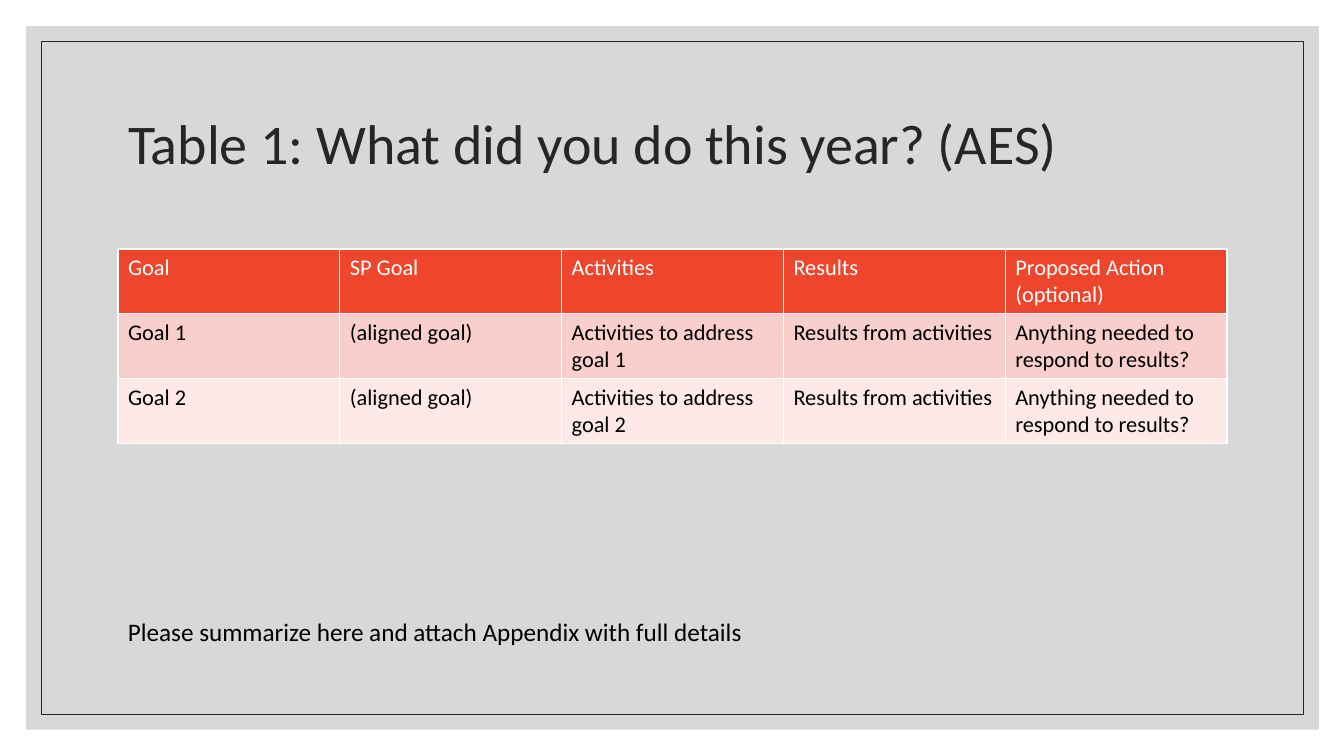
from dataclasses import dataclass

from lxml.etree import SubElement
from pptx import Presentation
from pptx.dml.color import RGBColor
from pptx.enum.shapes import MSO_SHAPE
from pptx.enum.text import MSO_ANCHOR, MSO_AUTO_SIZE, PP_ALIGN
from pptx.oxml import parse_xml
from pptx.oxml.ns import nsdecls, qn
from pptx.util import Inches, Pt


@dataclass(frozen=True)
class Theme:
    """Colours, font and type sizes of the slide."""
    font: str = "Calibri"
    dark: str = "262626"
    black: str = "000000"
    white: str = "FFFFFF"
    panel: str = "BFBFBF"
    head: str = "EE462D"
    bands: tuple = ("F8CFCD", "FCE9E8")
    title: int = 40
    note: int = 18
    cell: int = 16


def rgb(code):
    """Return the colour for a hex code."""
    return RGBColor.from_string(code)


def write(frame, text, *, font, size, color, anchor=MSO_ANCHOR.TOP, spacing=None):
    """Put formatted text into a text frame."""
    frame.word_wrap = True
    frame.vertical_anchor = anchor
    para = frame.paragraphs[0]
    para.alignment = PP_ALIGN.LEFT
    if spacing:
        para.line_spacing = spacing
    run = para.add_run()
    run.text = text
    run.font.name = font
    run.font.size = Pt(size)
    run.font.color.rgb = rgb(color)


class Board:
    """Holds the theme and the current slide."""

    def __init__(self, theme, slide):
        """Keep the theme and the slide."""
        self.theme = theme
        self.slide = slide

    def rect(self, left, top, width, height, fill=None, alpha=100, line=None):
        """Add a plain rectangle."""
        box = self.slide.shapes.add_shape(
            MSO_SHAPE.RECTANGLE, Inches(left), Inches(top), Inches(width), Inches(height))
        box.shadow.inherit = False
        if fill:
            box.fill.solid()
            box.fill.fore_color.rgb = rgb(fill)
            color = box.element.spPr.find(qn("a:solidFill"))[0]
            SubElement(color, qn("a:alpha")).set("val", str(alpha * 1000))
        else:
            box.fill.background()
        if line:
            box.line.color.rgb = rgb(line)
            box.line.width = Pt(0.5)
        else:
            box.line.fill.background()

    def title(self, text, left, top, width, height):
        """Fill the title placeholder and bring it to the front."""
        shape = self.slide.shapes.title
        shape.left, shape.top = Inches(left), Inches(top)
        shape.width, shape.height = Inches(width), Inches(height)
        write(shape.text_frame, text, font=self.theme.font, size=self.theme.title,
              color=self.theme.dark, anchor=MSO_ANCHOR.MIDDLE, spacing=0.9)
        shape.element.getparent().append(shape.element)

    def note(self, text, left, top, width, height):
        """Add a text box."""
        box = self.slide.shapes.add_textbox(
            Inches(left), Inches(top), Inches(width), Inches(height))
        write(box.text_frame, text, font=self.theme.font, size=self.theme.note,
              color=self.theme.black)
        box.text_frame.auto_size = MSO_AUTO_SIZE.SHAPE_TO_FIT_TEXT

    def edge(self, cell):
        """Draw thin white borders round a cell."""
        props = cell._tc.get_or_add_tcPr()
        for side in ("lnL", "lnR", "lnT", "lnB"):
            props.append(parse_xml(
                f'<a:{side} {nsdecls("a")} w="{Pt(1)}"><a:solidFill>'
                f'<a:srgbClr val="{self.theme.white}"/></a:solidFill></a:{side}>'))

    def table(self, rows, left, top, width, height):
        """Add a table with a header row and banded rows."""
        table = self.slide.shapes.add_table(
            len(rows), len(rows[0]), Inches(left), Inches(top),
            Inches(width), Inches(height)).table
        for i, row in enumerate(rows):
            fill = self.theme.bands[(i - 1) % 2] if i else self.theme.head
            for j, text in enumerate(row):
                cell = table.cell(i, j)
                self.edge(cell)
                cell.fill.solid()
                cell.fill.fore_color.rgb = rgb(fill)
                write(cell.text_frame, text, font=self.theme.font, size=self.theme.cell,
                      color=self.theme.black if i else self.theme.white)


def main():
    """Build the slide and save it."""
    deck = Presentation()
    deck.slide_width, deck.slide_height = Inches(13.33), Inches(7.5)
    theme = Theme()
    board = Board(theme, deck.slides.add_slide(deck.slide_layouts[5]))
    board.rect(0.26, 0.26, 12.82, 6.98, fill=theme.panel, alpha=60)
    board.rect(0.41, 0.41, 12.52, 6.68, line=theme.dark)
    board.title("Table 1: What did you do this year? (AES)", 1.17, 0.7, 11, 1.5)
    head = ["Goal", "SP Goal", "Activities", "Results", "Proposed Action (optional)"]
    goals = [[f"Goal {n}", "(aligned goal)", f"Activities to address goal {n}",
              "Results from activities", "Anything needed to respond to results?"]
             for n in (1, 2)]
    board.table([head, *goals], 1.17, 2.47, 11, 1.93)
    board.note("Please summarize here and attach Appendix with full details",
               1.17, 6.07, 11, 0.4)
    deck.save("out.pptx")


if __name__ == "__main__":
    main()
